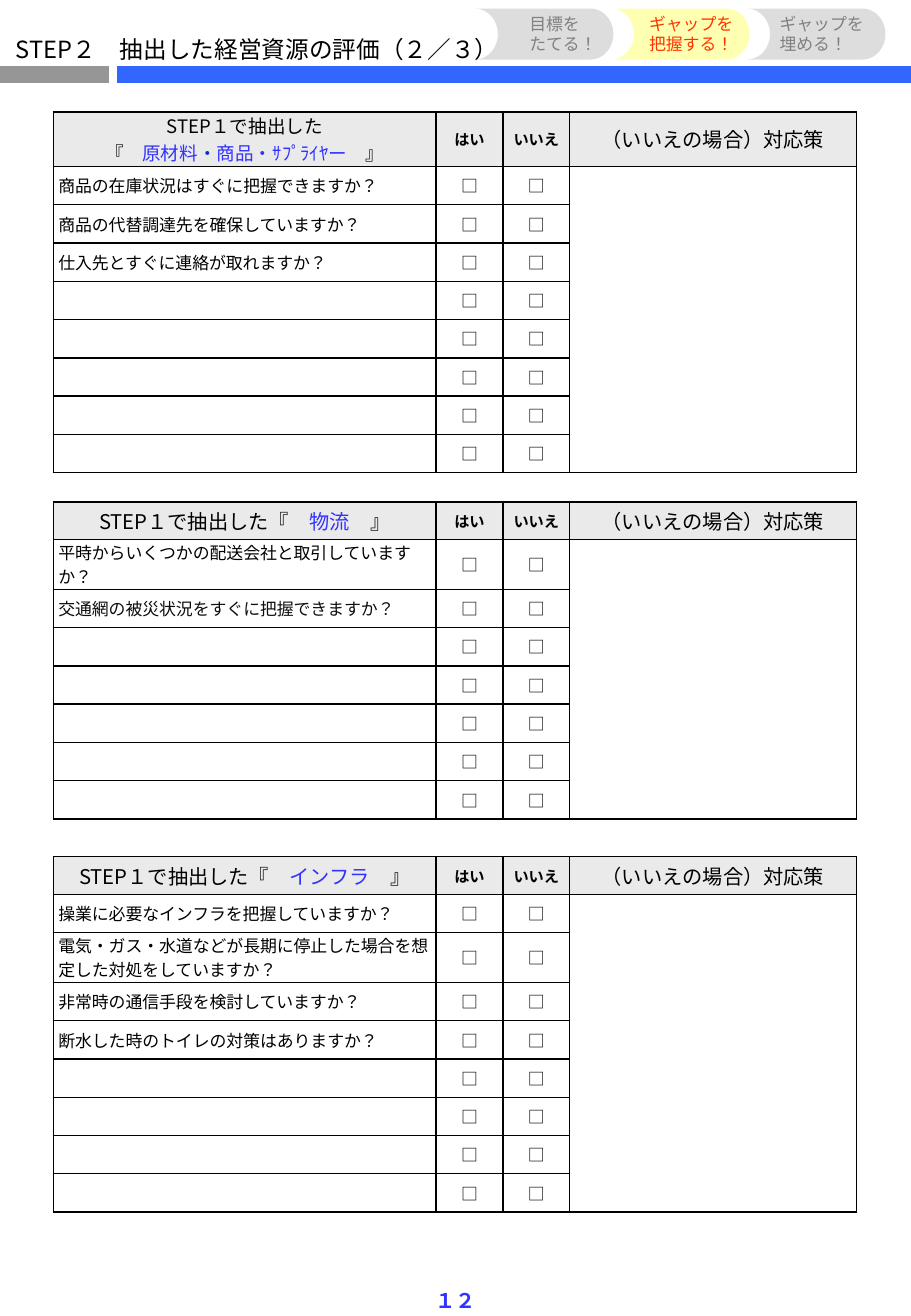
from lxml import etree
from pptx import Presentation
from pptx.dml.color import RGBColor
from pptx.enum.lang import MSO_LANGUAGE_ID
from pptx.enum.shapes import MSO_CONNECTOR, MSO_SHAPE
from pptx.enum.text import MSO_ANCHOR, PP_ALIGN
from pptx.oxml.ns import qn
from pptx.util import Inches, Pt

LEFT, CENTER = PP_ALIGN.LEFT, PP_ALIGN.CENTER
MIDDLE = MSO_ANCHOR.MIDDLE
STRAIGHT = MSO_CONNECTOR.STRAIGHT
TAB = MSO_SHAPE.FLOWCHART_STORED_DATA
JAPANESE = MSO_LANGUAGE_ID.JAPANESE
FONT = "Noto Sans CJK JP"
C = {
    "text": "000000", "soft": "0D0D0D", "name": "3333FF", "dot": "0033CC",
    "bar": "3366FF", "gray_bar": "969696", "tab": "DDDDDD", "tab_on": "FFFFB2",
    "tab_text": "808080", "tab_text_on": "FF3300", "head": "EAEAEA",
}
COLS = [3.15, 0.55, 0.55, 2.36]
ROW_H, TALL_H = 0.315, 0.41


def rgb(name):
    """Return the named colour."""
    return RGBColor.from_string(C[name])


def write(tf, *paras, size=10, color="text", bold=False, align=LEFT, wrap=True):
    """Write paragraphs, each a string or a list of (text, colour) runs."""
    tf.word_wrap = wrap
    for i, para in enumerate(paras):
        p = tf.paragraphs[0] if i == 0 else tf.add_paragraph()
        p.alignment = align
        p.space_before = Pt(0)
        p._p.get_or_add_pPr().set("hangingPunct", "0")
        for text, run_color in [(para, color)] if isinstance(para, str) else para:
            if not text:
                continue
            r = p.add_run()
            r.text = text
            r.font.name = FONT
            r.font.size = Pt(size)
            r.font.bold = bold
            r.font.language_id = JAPANESE
            r.font.color.rgb = rgb(run_color)
            ea = etree.SubElement(r.font._element, qn("a:ea"))
            ea.set("typeface", FONT)
        p._p.get_or_add_endParaRPr().set("sz", str(size * 100))


def add_text(slide, box, *paras, **fmt):
    """Add a text box at box."""
    sp = slide.shapes.add_textbox(*map(Inches, box))
    write(sp.text_frame, *paras, **fmt)


def add_bar(slide, x1, x2, y, color):
    """Add a thick horizontal rule."""
    line = slide.shapes.add_connector(STRAIGHT, *map(Inches, (x1, y, x2, y)))
    line.line.color.rgb = rgb(color)
    line.line.width = Pt(10)
    etree.SubElement(line._element.spPr, qn("a:effectLst"))


def add_header(slide, title):
    """Place the title over its two rules."""
    sp = slide.shapes.title
    sp.left, sp.top, sp.width, sp.height = map(Inches, (0.03, 0.23, 4.6, 0.34))
    tf = sp.text_frame
    tf.vertical_anchor = MIDDLE
    tf.margin_top = tf.margin_bottom = 0
    write(tf, title, size=14)
    add_bar(slide, 0, 0.9, 0.61, "gray_bar")
    add_bar(slide, 0.96, 7.5, 0.61, "bar")


def add_tabs(slide, left, top, tabs):
    """Place the step tabs, the last one at the back."""
    step, width, height = 1.12, 1.14, 0.42
    for i in reversed(range(len(tabs))):
        fill = "tab_on" if tabs[i]["on"] else "tab"
        box = (left + i * step, top, width, height)
        sp = slide.shapes.add_shape(TAB, *map(Inches, box))
        sp.shadow.inherit = False
        sp.fill.solid()
        sp.fill.fore_color.rgb = rgb(fill)
        sp.line.fill.background()
        sp._element.spPr.xfrm.set("flipH", "1")
    for tab in tabs:
        box = (tab["x"], top - 0.01, tab["w"], height + 0.02)
        color, align = ("tab_text_on", CENTER) if tab["on"] else ("tab_text", LEFT)
        add_text(slide, box, *tab["lines"], color=color, align=align, wrap=False)


def format_cell(cell, fill=None):
    """Set the margins, fill and thin black borders of a cell."""
    cell.vertical_anchor = MIDDLE
    cell.margin_left = cell.margin_right = Inches(0.04)
    cell.margin_top = cell.margin_bottom = 0
    tcPr = cell._tc.get_or_add_tcPr()
    for side in ("lnL", "lnR", "lnT", "lnB"):
        ln = etree.SubElement(tcPr, qn(f"a:{side}"), w=str(Pt(1)))
        solid = etree.SubElement(ln, qn("a:solidFill"))
        etree.SubElement(solid, qn("a:srgbClr"), val=C["text"])
    if fill:
        cell.fill.solid()
        cell.fill.fore_color.rgb = rgb(fill)
    else:
        cell.fill.background()


def add_checklist(slide, left, top, heading, questions, rows, head_h=0.31, head_size=12):
    """Place a checklist table with yes and no boxes and one merged answer area."""
    heights = [head_h] + [ROW_H] * rows
    for i, (question, _) in enumerate(questions, 1):
        if len(question) > 22:
            heights[i] = TALL_H
    box = (left, top, sum(COLS), sum(heights))
    table = slide.shapes.add_table(rows + 1, len(COLS), *map(Inches, box)).table
    table.first_row = table.horz_banding = False
    for col, width in zip(table.columns, COLS):
        col.width = Inches(width)
    for row, height in zip(table.rows, heights):
        row.height = Inches(height)
    table.cell(1, 3).merge(table.cell(rows, 3))

    heads = [(heading, head_size, False), (["はい"], 9, True),
             (["いいえ"], 9, True), (["（いいえの場合）対応策"], 12, False)]
    for c, (paras, size, bold) in enumerate(heads):
        cell = table.cell(0, c)
        format_cell(cell, "head")
        write(cell.text_frame, *paras, size=size, bold=bold, align=CENTER)

    blanks = [("", "text")] * (rows - len(questions))
    for i, (question, color) in enumerate(questions + blanks, 1):
        for c, text in enumerate([question, "□", "□", ""]):
            cell = table.cell(i, c)
            format_cell(cell)
            write(cell.text_frame, text, color=color if c == 0 else "text",
                  align=CENTER if c else LEFT)


def build_slide(prs):
    """Build the resource evaluation slide."""
    slide = prs.slides.add_slide(prs.slide_layouts[5])
    add_header(slide, "STEP２　抽出した経営資源の評価（２／３）")
    add_text(slide, (3.48, 10.55, 0.54, 0.31), "１２", size=12, color="name",
             bold=True, align=CENTER, wrap=False)
    add_tabs(slide, 3.91, 0.07, [
        {"lines": ["目標を", "たてる！"], "x": 4.26, "w": 0.76, "on": False},
        {"lines": ["ギャップを", "把握する！"], "x": 5.24, "w": 0.9, "on": True},
        {"lines": ["ギャップを", "埋める！"], "x": 6.32, "w": 0.9, "on": False},
    ])
    add_checklist(
        slide, 0.44, 0.92,
        ["STEP１で抽出した",
         [("『　", "text"), ("原材料", "name"), ("・", "dot"),
          ("商品・ｻﾌﾟﾗｲﾔー　", "name"), ("』", "text")]],
        [("商品の在庫状況はすぐに把握できますか？", "text"),
         ("商品の代替調達先を確保していますか？", "text"),
         ("仕入先とすぐに連絡が取れますか？", "text")],
        rows=8, head_h=0.45, head_size=11)
    add_checklist(
        slide, 0.44, 4.13,
        [[("STEP１で抽出した『　", "text"), ("物流　", "name"), ("』", "text")]],
        [("平時からいくつかの配送会社と取引していますか？", "text"),
         ("交通網の被災状況をすぐに把握できますか？", "soft")],
        rows=7)
    add_checklist(
        slide, 0.44, 7.05,
        [[("STEP１で抽出した『　", "text"), ("インフラ　", "name"), ("』", "text")]],
        [("操業に必要なインフラを把握していますか？", "text"),
         ("電気・ガス・水道などが長期に停止した場合を想定した対処をしていますか？", "text"),
         ("非常時の通信手段を検討していますか？", "text"),
         ("断水した時のトイレの対策はありますか？", "text")],
        rows=8)


def main():
    """Create and save the presentation."""
    prs = Presentation()
    prs.slide_width, prs.slide_height = Inches(7.5), Inches(10.83)
    build_slide(prs)
    prs.save("out.pptx")


if __name__ == "__main__":
    main()
